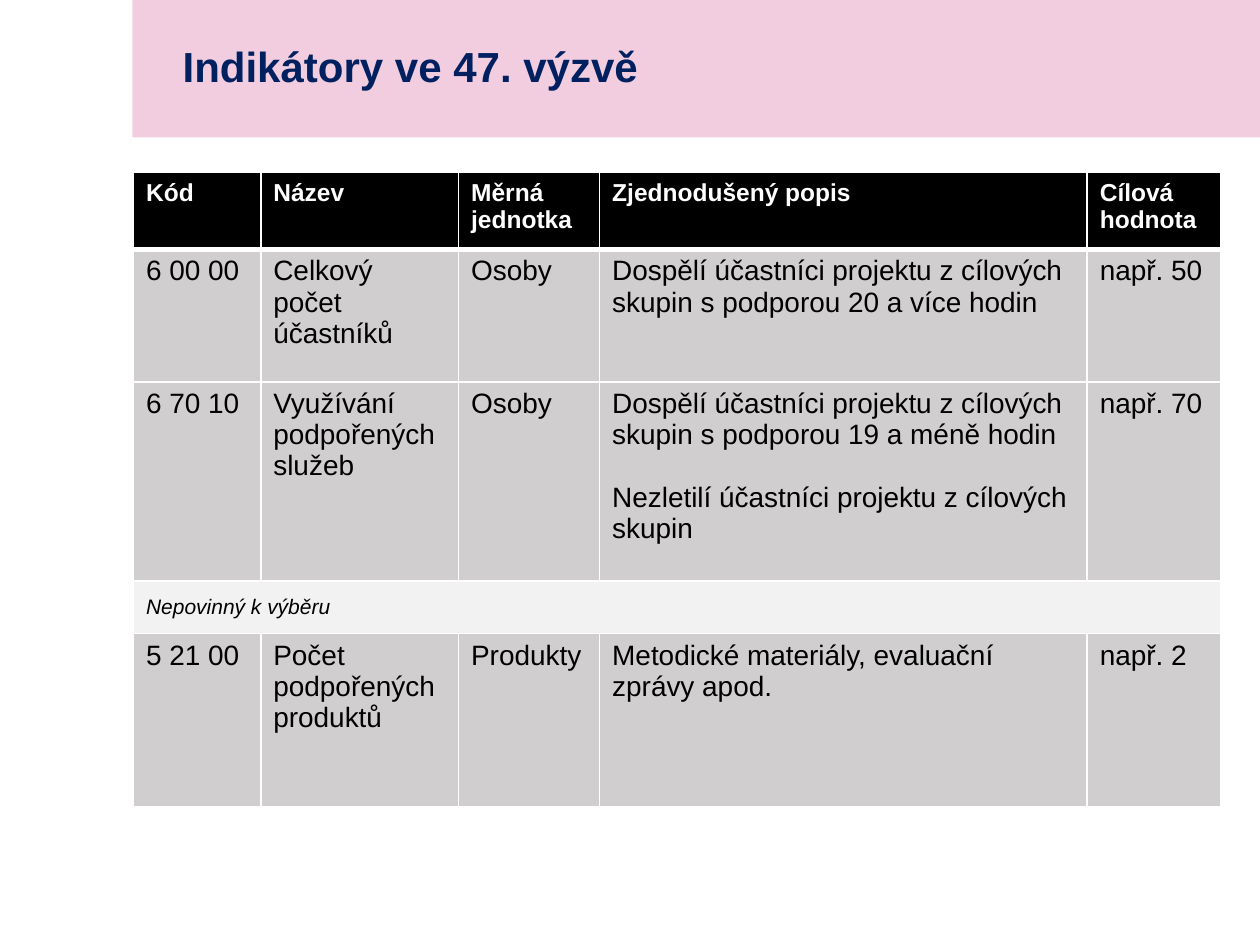
from lxml.etree import SubElement
from pptx import Presentation
from pptx.dml.color import RGBColor
from pptx.enum.shapes import MSO_SHAPE
from pptx.enum.text import MSO_ANCHOR, MSO_AUTO_SIZE, PP_ALIGN
from pptx.oxml.ns import qn
from pptx.util import Inches, Pt

FORMATS = {
    "title": {"name": "Arial", "size": Pt(24), "bold": True, "italic": False, "color": "002060"},
    "header": {"name": "Arial", "size": Pt(14), "bold": True, "italic": False, "color": "FFFFFF"},
    "body": {"name": "Arial", "size": Pt(16), "bold": False, "italic": False, "color": "000000"},
    "note": {"name": "Arial", "size": Pt(12), "bold": False, "italic": True, "color": "000000"},
}
FILLS = {"header": "000000", "body": "D0CECE", "note": "F2F2F2"}
COLUMNS = [1.01, 1.57, 1.12, 3.87, 1.06]
ROWS = [
    (0.61, "header", ["Kód", "Název", "Měrná jednotka", "Zjednodušený popis", "Cílová hodnota"]),
    (1.05, "body", ["6 00 00", "Celkový počet účastníků", "Osoby",
                    "Dospělí účastníci projektu z cílových skupin s podporou 20 a více hodin",
                    "např. 50"]),
    (1.58, "body", ["6 70 10", "Využívání podpořených služeb", "Osoby",
                    "Dospělí účastníci projektu z cílových skupin s podporou 19 a méně hodin\n"
                    "Nezletilí účastníci projektu z cílových skupin",
                    "např. 70"]),
    (0.42, "note", ["Nepovinný k výběru", "", "", "", ""]),
    (1.37, "body", ["5 21 00", "Počet podpořených produktů", "Produkty",
                    "Metodické materiály, evaluační zprávy apod.", "např. 2"]),
]


def apply_format(frame, style):
    for para in frame.paragraphs:
        for key, value in FORMATS[style].items():
            if key == "color":
                para.font.color.rgb = RGBColor.from_string(value)
            else:
                setattr(para.font, key, value)


def add_borders(cell, widths):
    """Draw white lines around a cell; widths maps L, R, T and B to points."""
    properties = cell._tc.get_or_add_tcPr()
    for position, (side, width) in enumerate(widths.items()):
        line = SubElement(properties, qn(f"a:ln{side}"), w=str(Pt(width)))
        SubElement(SubElement(line, qn("a:solidFill")), qn("a:srgbClr"), val="FFFFFF")
        properties.insert(position, line)


deck = Presentation()
deck.slide_width, deck.slide_height = Inches(10), Inches(7.5)
slide = deck.slides.add_slide(deck.slide_layouts[5])
shapes = slide.shapes

# Title band, sent behind the title
band = shapes.add_shape(MSO_SHAPE.RECTANGLE, Inches(1.05), 0, Inches(8.95), Inches(1.09))
band.shadow.inherit = False
band.fill.solid()
band.fill.fore_color.rgb = RGBColor.from_string("F2CDE0")
band.line.fill.background()
shapes._spTree.insert(2, band._element)

title = shapes.title
title.left, title.top, title.width, title.height = Inches(1.35), 0, Inches(8.35), band.height
frame = title.text_frame
frame.text = "Indikátory ve 47. výzvě"
frame.auto_size = MSO_AUTO_SIZE.NONE
frame.vertical_anchor = MSO_ANCHOR.MIDDLE
frame.paragraphs[0].alignment = PP_ALIGN.LEFT
frame.paragraphs[0].line_spacing = 0.9
apply_format(frame, "title")

# Indicator table
heights = [height for height, _, _ in ROWS]
table = shapes.add_table(len(ROWS), len(COLUMNS), Inches(1.06), Inches(1.37),
                         Inches(sum(COLUMNS)), Inches(sum(heights))).table
table.horz_banding = False
for column, width in zip(table.columns, COLUMNS):
    column.width = Inches(width)

for index, (height, style, texts) in enumerate(ROWS):
    table.rows[index].height = Inches(height)
    for cell, text in zip(table.rows[index].cells, texts):
        cell.text = text
        cell.fill.solid()
        cell.fill.fore_color.rgb = RGBColor.from_string(FILLS[style])
        cell.vertical_anchor = MSO_ANCHOR.MIDDLE if style == "note" else MSO_ANCHOR.TOP
        apply_format(cell.text_frame, style)
        for para in cell.text_frame.paragraphs[1:]:
            para.space_before = Pt(18.4)
        add_borders(cell, {"L": 1, "R": 1, "T": 3 if index == 1 else 1,
                           "B": 3 if index == 0 else 1})
    if style == "note":
        table.cell(index, 0).merge(table.cell(index, len(COLUMNS) - 1))

deck.save("out.pptx")
